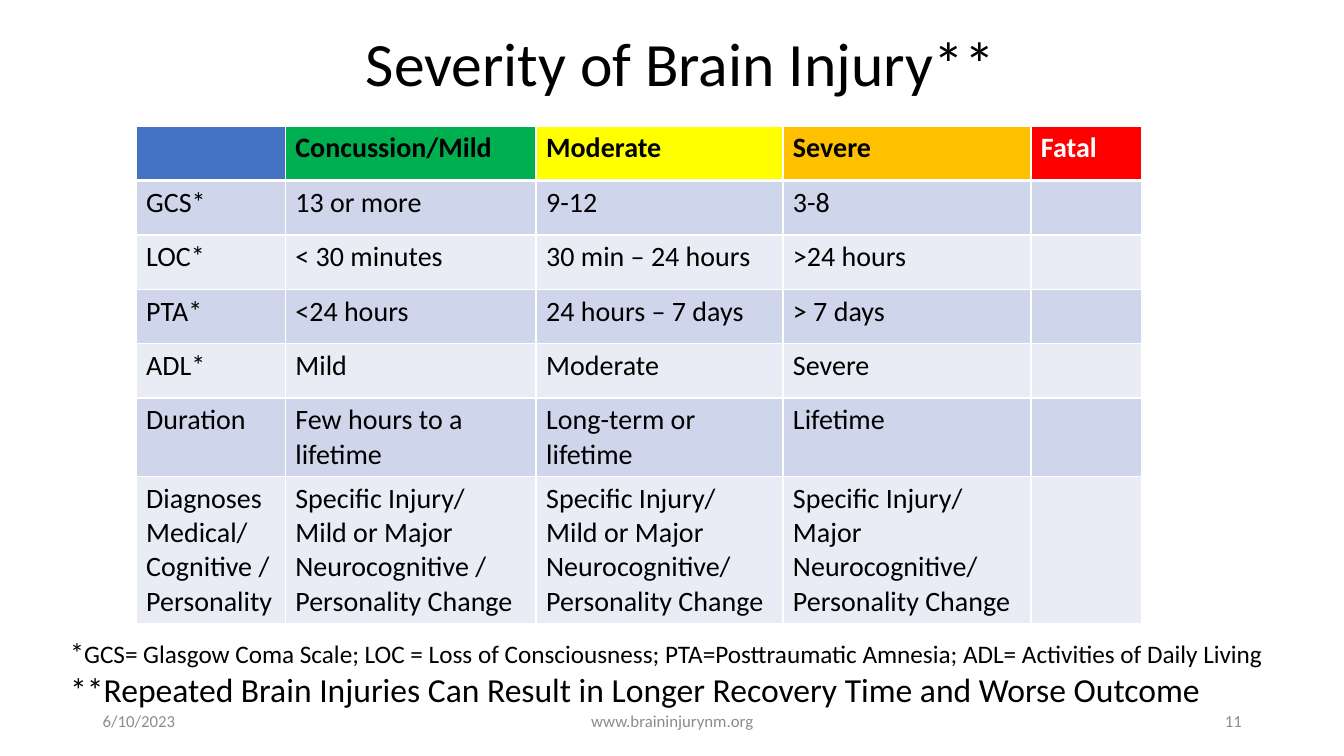
"""Build the brain injury severity slide."""
from dataclasses import dataclass

import pptx
import pptx.dml.color
import pptx.enum.text
import pptx.oxml
import pptx.oxml.ns
import pptx.util

Cm = pptx.util.Cm
RGBColor = pptx.dml.color.RGBColor
Align = pptx.enum.text.PP_ALIGN
Anchor = pptx.enum.text.MSO_ANCHOR

BLACK = RGBColor(0x00, 0x00, 0x00)
WHITE = RGBColor(0xFF, 0xFF, 0xFF)
GRAY = RGBColor(0x8C, 0x8C, 0x8C)
BLUE = RGBColor(0x44, 0x72, 0xC4)
GREEN = RGBColor(0x00, 0xB0, 0x50)
YELLOW = RGBColor(0xFF, 0xFF, 0x00)
AMBER = RGBColor(0xFF, 0xC0, 0x00)
RED = RGBColor(0xFF, 0x00, 0x00)
BAND_DARK = RGBColor(0xCF, 0xD5, 0xEA)
BAND_LIGHT = RGBColor(0xE9, 0xEB, 0xF5)


@dataclass
class Severity:
    name: str
    fill: RGBColor
    width: float
    color: RGBColor = BLACK


@dataclass
class Label:
    left: float
    top: float
    width: float
    height: float
    runs: list[tuple[str, int]]
    color: RGBColor = BLACK
    align: Align = Align.LEFT
    anchor: Anchor = Anchor.TOP
    wrap: bool = True
    spacing: float = 1.0


SEVERITIES = [
    Severity("", BLUE, 3.76),
    Severity("Concussion/Mild", GREEN, 6.32),
    Severity("Moderate", YELLOW, 6.22),
    Severity("Severe", AMBER, 6.25),
    Severity("Fatal", RED, 2.79, WHITE),
]
MEASURES = [
    ["GCS*", "13 or more", "9-12", "3-8", ""],
    ["LOC*", "< 30 minutes", "30 min – 24 hours", ">24 hours", ""],
    ["PTA*", "<24 hours", "24 hours – 7 days", "> 7 days", ""],
    ["ADL*", "Mild", "Moderate", "Severe", ""],
    ["Duration", "Few hours to a lifetime", "Long-term or lifetime", "Lifetime", ""],
    ["Diagnoses Medical/ Cognitive / Personality",
     "Specific Injury/\nMild or Major Neurocognitive /\nPersonality Change",
     "Specific Injury/\nMild or Major Neurocognitive/ Personality Change",
     "Specific Injury/ Major Neurocognitive/ Personality Change", ""],
]
ROW_HEIGHTS = [1.37] * 5 + [1.98, 3.71]

FOOTER_TOP, FOOTER_HEIGHT = 17.65, 1.02
LABELS = [
    Label(8.97, 0.58, 16.56, 2.18, [("Severity of Brain Injury**", 44)],
          anchor=Anchor.MIDDLE, spacing=0.9),
    Label(1.52, 15.88, 31.04, 1.12, [
        ("*", 20),
        ("GCS= Glasgow Coma Scale; LOC = Loss of Consciousness; "
         "PTA=Posttraumatic Amnesia; ADL= Activities of Daily Living", 18)]),
    Label(1.52, 16.74, 29.26, 1.27, [
        ("**Repeated Brain Injuries Can Result in Longer Recovery Time "
         "and Worse Outcome", 24)], wrap=False),
    Label(2.34, FOOTER_TOP, 7.62, FOOTER_HEIGHT, [("6/10/2023", 12)],
          GRAY, anchor=Anchor.MIDDLE),
    Label(11.23, FOOTER_TOP, 11.43, FOOTER_HEIGHT, [("www.braininjurynm.org", 12)],
          GRAY, Align.CENTER, Anchor.MIDDLE),
    Label(23.93, FOOTER_TOP, 7.62, FOOTER_HEIGHT, [("11", 12)],
          GRAY, Align.RIGHT, Anchor.MIDDLE),
]


def add_text(p, text: str, *, size: int = 20, color: RGBColor = BLACK,
             bold: bool = False) -> None:
    r = p.add_run()
    r.text = text
    r.font.name = "Calibri"
    r.font.size = pptx.util.Pt(size)
    r.font.bold = bold
    r.font.color.rgb = color


def add_label(s, label: Label) -> None:
    sp = s.shapes.add_textbox(Cm(label.left), Cm(label.top),
                              Cm(label.width), Cm(label.height))
    tf = sp.text_frame
    tf.word_wrap = label.wrap
    tf.vertical_anchor = label.anchor
    p = tf.paragraphs[0]
    p.alignment = label.align
    p.line_spacing = label.spacing
    for text, size in label.runs:
        add_text(p, text, size=size, color=label.color)


def set_borders(cell, **widths: int) -> None:
    tc_pr = cell._tc.get_or_add_tcPr()
    for side in "LRTB":
        width = pptx.util.Pt(widths.get(side, 1))
        tc_pr.append(pptx.oxml.parse_xml(
            f'<a:ln{side} {pptx.oxml.ns.nsdecls("a")} w="{width}">'
            f'<a:solidFill><a:srgbClr val="{WHITE}"/></a:solidFill></a:ln{side}>'))


def fill_cell(cell, text: str, fill: RGBColor, color: RGBColor = BLACK,
              bold: bool = False) -> None:
    cell.fill.solid()
    cell.fill.fore_color.rgb = fill
    tf = cell.text_frame
    for i, line in enumerate(text.split("\n") if text else []):
        p = tf.add_paragraph() if i else tf.paragraphs[0]
        add_text(p, line, color=color, bold=bold)


def add_severity_table(s) -> None:
    width = sum(severity.width for severity in SEVERITIES)
    table = s.shapes.add_table(len(ROW_HEIGHTS), len(SEVERITIES), Cm(3.43), Cm(3.18),
                               Cm(width), Cm(sum(ROW_HEIGHTS))).table
    for row, height in zip(table.rows, ROW_HEIGHTS):
        row.height = Cm(height)
    for j, severity in enumerate(SEVERITIES):
        table.columns[j].width = Cm(severity.width)
        header = table.cell(0, j)
        set_borders(header, B=3)
        fill_cell(header, severity.name, severity.fill, severity.color, bold=True)
        for i, measure in enumerate(MEASURES, 1):
            cell = table.cell(i, j)
            set_borders(cell, T=3 if i == 1 else 1)
            fill_cell(cell, measure[j], BAND_DARK if i % 2 else BAND_LIGHT)


def main() -> None:
    prs = pptx.Presentation()
    prs.slide_width, prs.slide_height = Cm(33.87), Cm(19.05)
    s = prs.slides.add_slide(prs.slide_layouts[6])
    title, *notes = LABELS
    add_label(s, title)
    add_severity_table(s)
    for label in notes:
        add_label(s, label)
    prs.save("out.pptx")


if __name__ == "__main__":
    main()
